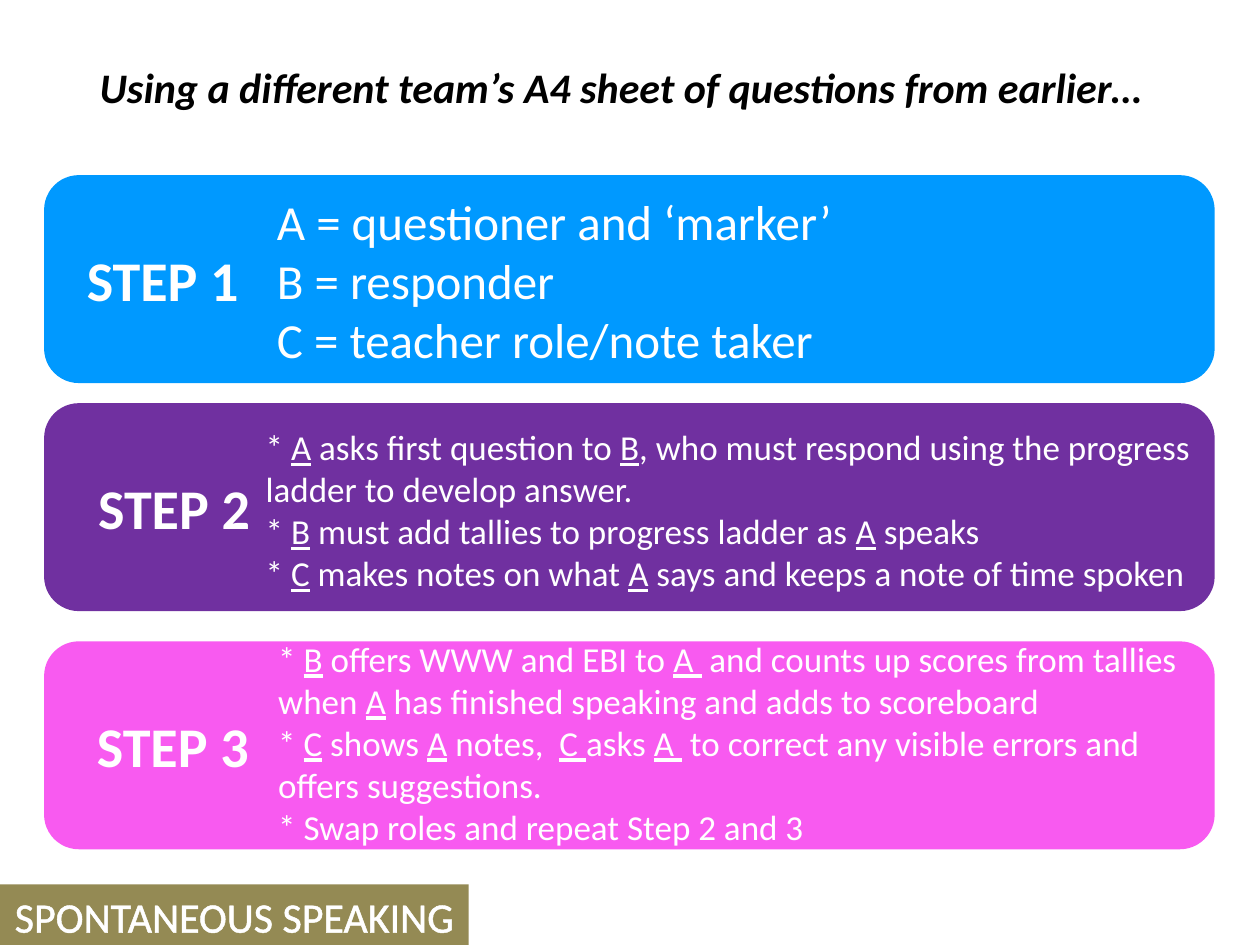
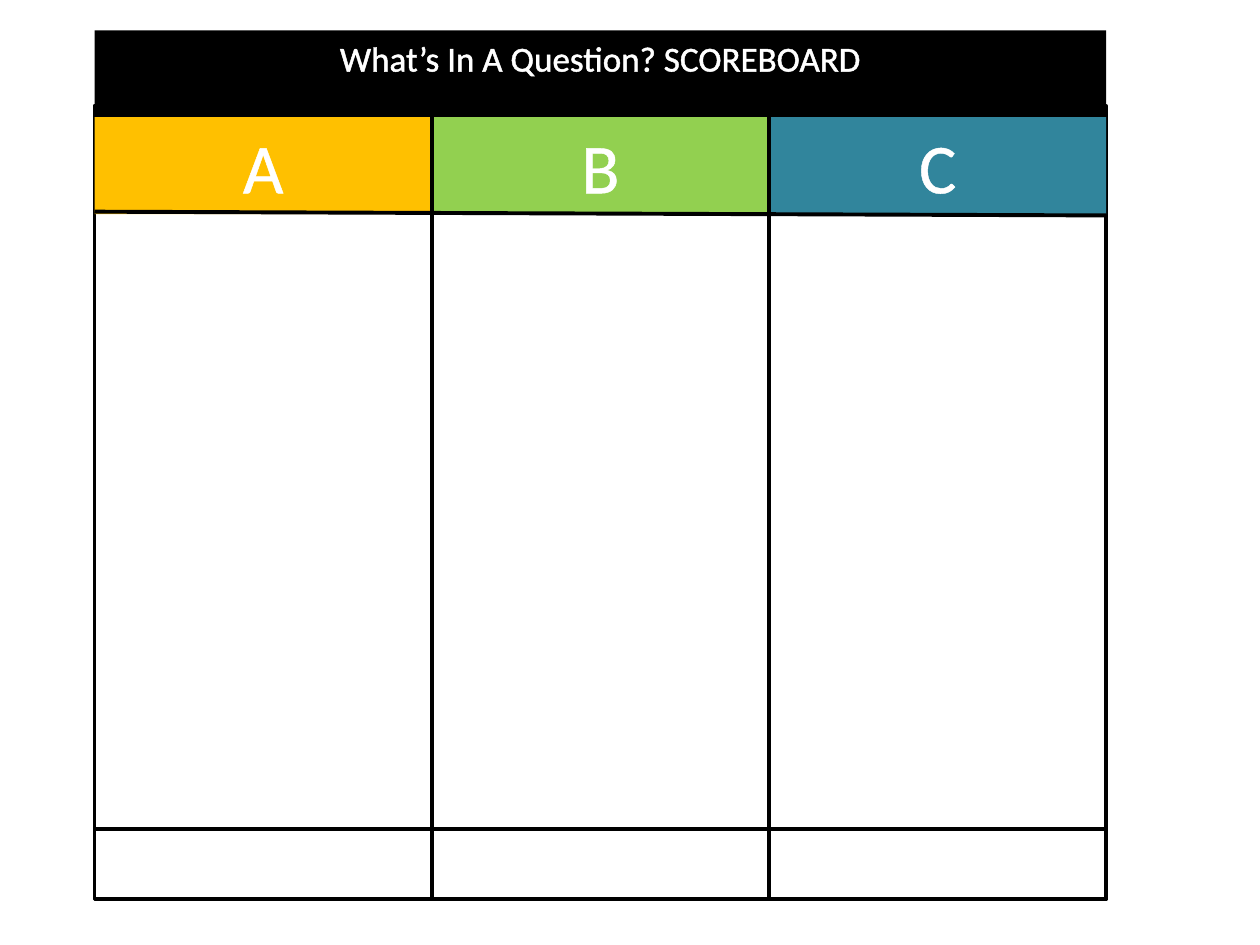
from lxml import etree
from pptx import Presentation
from pptx.dml.color import RGBColor
from pptx.enum.shapes import MSO_CONNECTOR, MSO_SHAPE
from pptx.enum.text import MSO_ANCHOR, MSO_AUTO_SIZE, PP_ALIGN
from pptx.oxml.ns import qn
from pptx.util import Inches, Pt

FONT = "Calibri"
BLACK = RGBColor(0x00, 0x00, 0x00)
WHITE = RGBColor(0xFF, 0xFF, 0xFF)
BLUE = RGBColor(0x00, 0x99, 0xFF)
PURPLE = RGBColor(0x70, 0x30, 0xA0)
PINK = RGBColor(0xF8, 0x5A, 0xF0)
OLIVE = RGBColor(0x94, 0x8A, 0x54)
AMBER = RGBColor(0xFF, 0xC0, 0x00)
GREEN = RGBColor(0x92, 0xD0, 0x50)
TEAL = RGBColor(0x31, 0x85, 0x9C)

# Underscores enclose underlined words.
STEPS = [
    dict(label="STEP 1", colour=BLUE, top=1.39, label_left=0.59,
         body_box=(2.1, 1.47, 4.84, 1.51), size=28, wrap=False,
         lines=["A = questioner and ‘marker’",
                "B = responder",
                "C = teacher role/note taker"]),
    dict(label="STEP 2", colour=PURPLE, top=3.2, label_left=0.68,
         body_box=(2.01, 3.33, 7.69, 1.45), size=20, wrap=True,
         lines=["* _A_ asks first question to _B_, who must respond using "
                "the progress ladder to develop answer.",
                "* _B_ must add tallies to progress ladder as _A_ speaks",
                "* _C_ makes notes on what _A_ says and keeps a note of time spoken"]),
    dict(label="STEP 3", colour=PINK, top=5.09, label_left=0.67,
         body_box=(2.11, 5.01, 7.69, 2.12), size=20, wrap=True,
         lines=["* _B_ offers WWW and EBI to _A _ and counts up scores from "
                "tallies when _A_ has finished speaking and adds to scoreboard",
                "* _C_ shows _A_ notes,  _C _asks _A _ to correct any visible "
                "errors and offers suggestions.",
                "* Swap roles and repeat Step 2 and 3"]),
]
STEPS_TITLE = "Using a different team’s A4 sheet of questions from earlier…"
FOOTER = "SPONTANEOUS SPEAKING"
SCORE_TITLE = "What’s In A Question? SCOREBOARD"
TEAMS = [("A", AMBER), ("B", GREEN), ("C", TEAL)]

BAND_LEFT, BAND_WIDTH, BAND_HEIGHT = 0.35, 9.29, 1.65
BOARD_LEFT, BOARD_TOP, BOARD_WIDTH, BOARD_HEIGHT = 0.75, 0.84, 8.03, 6.3
TOTALS_TOP, TOTALS_HEIGHT = 6.58, 0.55
BOARD_RIGHT = BOARD_LEFT + BOARD_WIDTH
BOARD_BOTTOM = BOARD_TOP + BOARD_HEIGHT


def inches(*lengths):
    return [Inches(length) for length in lengths]


def outline_run(run):
    """Give the letters a thin white outline."""
    outline = etree.Element(qn("a:ln"), w=str(Pt(1.45)))
    fill = etree.SubElement(outline, qn("a:solidFill"))
    etree.SubElement(fill, qn("a:srgbClr"), val=str(WHITE))
    run.font._element.insert(0, outline)


def write(shape, lines, size, colour=WHITE, bold=False, italic=False,
          align=PP_ALIGN.LEFT, wrap=False, outlined=False):
    frame = shape.text_frame
    frame.word_wrap = wrap
    frame.auto_size = MSO_AUTO_SIZE.SHAPE_TO_FIT_TEXT
    frame.vertical_anchor = MSO_ANCHOR.TOP
    for number, line in enumerate(lines):
        paragraph = frame.add_paragraph() if number else frame.paragraphs[0]
        paragraph.alignment = align
        for position, words in enumerate(line.split("_")):
            if not words:
                continue
            run = paragraph.add_run()
            run.text = words
            font = run.font
            font.name, font.size = FONT, Pt(size)
            font.bold, font.italic = bold, italic
            font.color.rgb = colour
            if position % 2:
                font.underline = True
            if outlined:
                outline_run(run)


def add_block(slide, box, fill=None, kind=MSO_SHAPE.RECTANGLE):
    """Add a filled block, or a black frame when there is no fill."""
    block = slide.shapes.add_shape(kind, *inches(*box))
    block.shadow.inherit = False
    if fill is None:
        block.fill.background()
        block.line.color.rgb = BLACK
        block.line.width = Pt(2)
    else:
        block.fill.solid()
        block.fill.fore_color.rgb = fill
        block.line.fill.background()
    return block


def add_text(slide, box, lines, size, **style):
    write(slide.shapes.add_textbox(*inches(*box)), lines, size, **style)


def add_rule(slide, start, end):
    rule = slide.shapes.add_connector(MSO_CONNECTOR.STRAIGHT, *inches(*start, *end))
    rule.line.color.rgb = BLACK
    rule.line.width = Pt(2.25)
    etree.SubElement(rule._element.spPr, qn("a:effectLst"))


def set_title(slide, box, text, size, **style):
    title = slide.shapes.title
    title.left, title.top, title.width, title.height = inches(*box)
    write(title, [text], size, **style)
    return title


def build_steps(slide):
    set_title(slide, (0.69, 0.44, 8.48, 0.5), STEPS_TITLE, 24,
              colour=BLACK, bold=True, italic=True)
    for step in STEPS:
        add_block(slide, (BAND_LEFT, step["top"], BAND_WIDTH, BAND_HEIGHT),
                  step["colour"], MSO_SHAPE.ROUNDED_RECTANGLE)
    for step in STEPS:
        label_box = (step["label_left"], step["top"] + 0.51, 1.42, 0.64)
        add_text(slide, label_box, [step["label"]], 32, bold=True)
        add_text(slide, step["body_box"], step["lines"], step["size"],
                 wrap=step["wrap"])
    footer = add_block(slide, (0, 7.02, 3.72, 0.5), OLIVE)
    write(footer, [FOOTER], 24, align=PP_ALIGN.CENTER, outlined=True)


def build_scoreboard(slide):
    heading = dict(align=PP_ALIGN.CENTER, wrap=True, outlined=True)
    title = set_title(slide, (BOARD_LEFT, 0.24, BOARD_WIDTH, 0.44),
                      SCORE_TITLE, 20, **heading)
    title.fill.solid()
    title.fill.fore_color.rgb = BLACK

    add_block(slide, (BOARD_LEFT, BOARD_TOP, BOARD_WIDTH, BOARD_HEIGHT))
    column_width = BOARD_WIDTH / len(TEAMS)
    lefts = [BOARD_LEFT + i * column_width for i in range(len(TEAMS))]
    for left, (team, colour) in zip(lefts, TEAMS):
        header = add_block(slide, (left, 0.93, column_width, 0.77), colour)
        write(header, [team], 40, **heading)
    for left in lefts[1:]:
        add_rule(slide, (left, BOARD_TOP), (left, BOARD_BOTTOM))
    add_rule(slide, (BOARD_LEFT, 1.68), (BOARD_RIGHT, 1.71))
    add_block(slide, (BOARD_LEFT, TOTALS_TOP, BOARD_WIDTH, TOTALS_HEIGHT))


def main():
    deck = Presentation()
    deck.slide_width, deck.slide_height = inches(10, 7.5)
    title_only = deck.slide_layouts[5]
    for build in (build_steps, build_scoreboard):
        build(deck.slides.add_slide(title_only))
    deck.save("out.pptx")


if __name__ == "__main__":
    main()
